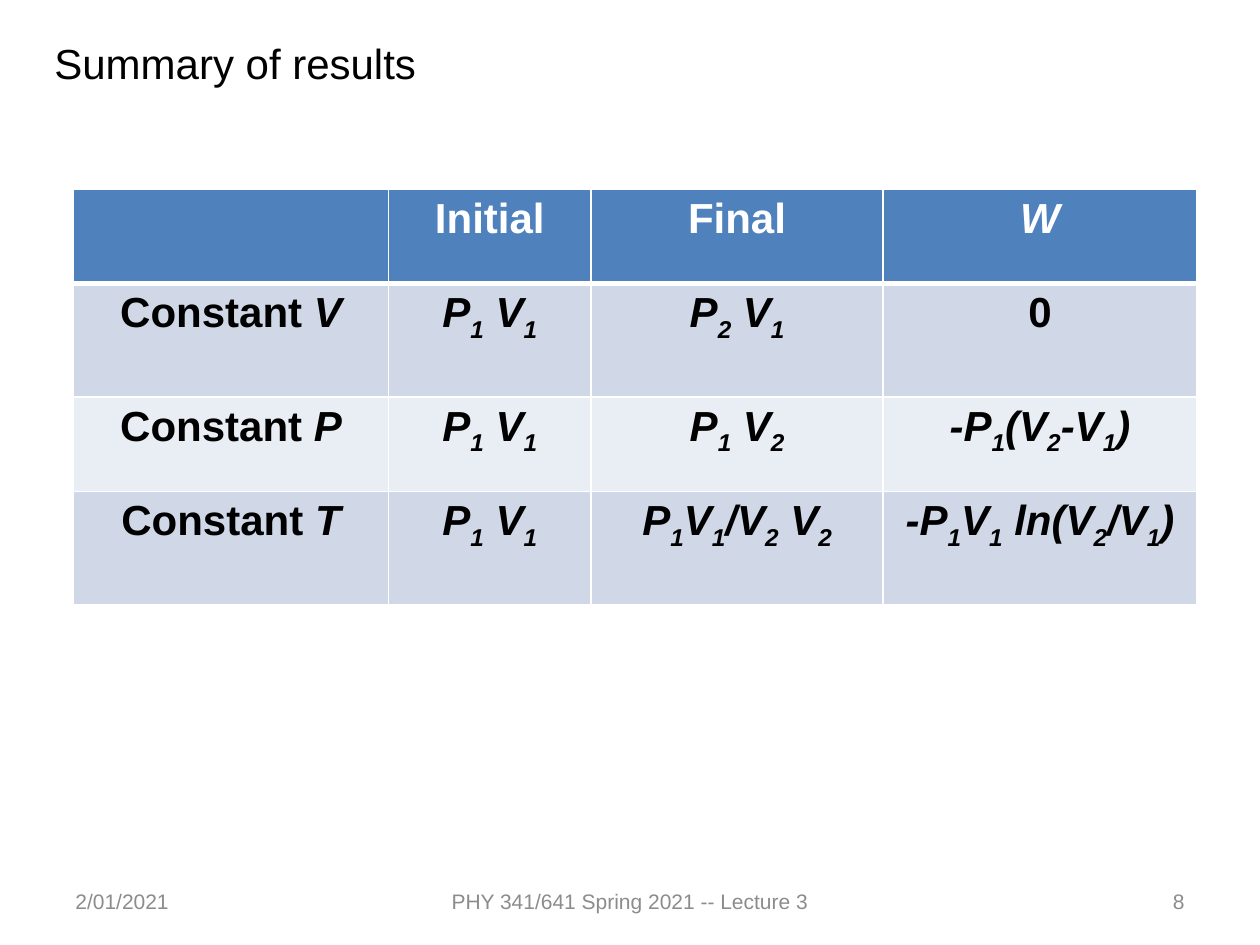
"""Build the slide that sums up the work done in constant V, P and T processes."""
import dataclasses
import typing

import lxml.etree
import pptx
import pptx.dml.color
import pptx.enum.text
import pptx.oxml.ns
import pptx.util

ALIGN = pptx.enum.text.PP_ALIGN
ANCHOR = pptx.enum.text.MSO_ANCHOR
GRID_UNIT = 1 / 12
FONT = "Arial"
WHITE, BLACK, GREY = "FFFFFF", "000000", "8C8C8C"
HEADER_FILL = "4F81BD"
BAND_FILLS = ("D0D8E8", "E9EDF4")


@dataclasses.dataclass(frozen=True)
class Label:
    """A line of text placed on the grid of twelfths of an inch."""
    text: str
    left: float
    top: float
    width: float
    height: float
    size: int
    color: str
    align: ALIGN = ALIGN.LEFT
    anchor: ANCHOR = ANCHOR.TOP


@dataclasses.dataclass(frozen=True)
class Entry:
    """Upright words followed by an italic formula, with _ before each subscript."""
    words: str = ""
    formula: str = ""


LABELS = (
    Label("2/01/2021", 6, 83.4, 28, 4.8, 12, GREY, ALIGN.LEFT, ANCHOR.MIDDLE),
    Label("PHY 341/641 Spring 2021 -- Lecture 3", 41, 83.4, 38, 4.8, 12, GREY,
          ALIGN.CENTER, ANCHOR.MIDDLE),
    Label("8", 86, 83.4, 28, 4.8, 12, GREY, ALIGN.RIGHT, ANCHOR.MIDDLE),
    Label("Summary of results", 4, 3, 95, 6, 24, BLACK),
)
INITIAL_STATE = Entry(formula="P_1 V_1")
RESULTS = (
    (Entry(), Entry("Initial"), Entry("Final"), Entry(formula="W")),
    (Entry("Constant ", "V"), INITIAL_STATE, Entry(formula="P_2 V_1"), Entry("0")),
    (Entry("Constant ", "P"), INITIAL_STATE, Entry(formula="P_1 V_2"),
     Entry(formula="-P_1(V_2-V_1)")),
    (Entry("Constant ", "T"), INITIAL_STATE, Entry(formula="P_1V_1/V_2 V_2"),
     Entry(formula="-P_1V_1 ln(V_2/V_1)")),
)
TABLE_LEFT, TABLE_TOP = 7, 18
COLUMN_WIDTHS = (30, 19.3, 27.8, 29.9)
ROW_HEIGHTS = (9, 10.8, 9, 10.8)


def grid(units: float) -> pptx.util.Length:
    """Turn grid units into a length."""
    return pptx.util.Inches(units * GRID_UNIT)


def rgb(color: str) -> pptx.dml.color.RGBColor:
    """Turn a hex string into a colour."""
    return pptx.dml.color.RGBColor.from_string(color)


def style_font(font: typing.Any, size: int, color: str) -> None:
    """Set typeface, size and colour."""
    font.name = FONT
    font.size = pptx.util.Pt(size)
    font.color.rgb = rgb(color)


def draw_label(slide: typing.Any, label: Label) -> None:
    """Add a text box for one label."""
    box = slide.shapes.add_textbox(
        grid(label.left), grid(label.top), grid(label.width), grid(label.height))
    frame = box.text_frame
    frame.word_wrap = True
    frame.vertical_anchor = label.anchor
    frame.text = label.text
    paragraph = frame.paragraphs[0]
    paragraph.alignment = label.align
    style_font(paragraph.runs[0].font, label.size, label.color)


def add_part(paragraph: typing.Any, text: str, color: str,
             italic: bool = False, subscript: bool = False) -> None:
    """Append a bold run unless its text is empty."""
    if not text:
        return
    run = paragraph.add_run()
    run.text = text
    style_font(run.font, 24, color)
    run.font.bold = True
    run.font.italic = italic
    if subscript:
        run.font._element.set("baseline", "-25000")


def write_entry(cell: typing.Any, entry: Entry, color: str) -> None:
    """Write words and formula into a cell."""
    paragraph = cell.text_frame.paragraphs[0]
    paragraph.alignment = ALIGN.CENTER
    paragraph.font.size = pptx.util.Pt(24)
    add_part(paragraph, entry.words, color)
    base, *indexed = entry.formula.split("_")
    add_part(paragraph, base, color, italic=True)
    for part in indexed:
        add_part(paragraph, part[0], color, italic=True, subscript=True)
        add_part(paragraph, part[1:], color, italic=True)


def draw_borders(cell: typing.Any, top: int, bottom: int) -> None:
    """Give a cell white borders with the given top and bottom widths."""
    properties = cell._tc.get_or_add_tcPr()
    qn = pptx.oxml.ns.qn
    for side, width in (("L", 1), ("R", 1), ("T", top), ("B", bottom)):
        line = lxml.etree.SubElement(
            properties, qn(f"a:ln{side}"), w=str(pptx.util.Pt(width)))
        fill = lxml.etree.SubElement(line, qn("a:solidFill"))
        lxml.etree.SubElement(fill, qn("a:srgbClr"), val=WHITE)


def draw_results(slide: typing.Any) -> None:
    """Add the table of initial state, final state and work."""
    table = slide.shapes.add_table(
        len(ROW_HEIGHTS), len(COLUMN_WIDTHS), grid(TABLE_LEFT), grid(TABLE_TOP),
        grid(sum(COLUMN_WIDTHS)), grid(sum(ROW_HEIGHTS))).table
    for column, width in zip(table.columns, COLUMN_WIDTHS):
        column.width = grid(width)
    for index, (row, height, entries) in enumerate(
            zip(table.rows, ROW_HEIGHTS, RESULTS)):
        row.height = grid(height)
        header = index == 0
        for cell, entry in zip(row.cells, entries):
            draw_borders(cell, 3 if index == 1 else 1, 3 if header else 1)
            cell.fill.solid()
            cell.fill.fore_color.rgb = rgb(
                HEADER_FILL if header else BAND_FILLS[(index - 1) % 2])
            write_entry(cell, entry, WHITE if header else BLACK)


def main() -> None:
    """Build and save the slide."""
    deck = pptx.Presentation()
    deck.slide_width = grid(120)
    deck.slide_height = grid(90)
    slide = deck.slides.add_slide(deck.slide_layouts[6])
    draw_results(slide)
    for label in LABELS:
        draw_label(slide, label)
    deck.save("out.pptx")


if __name__ == "__main__":
    main()
